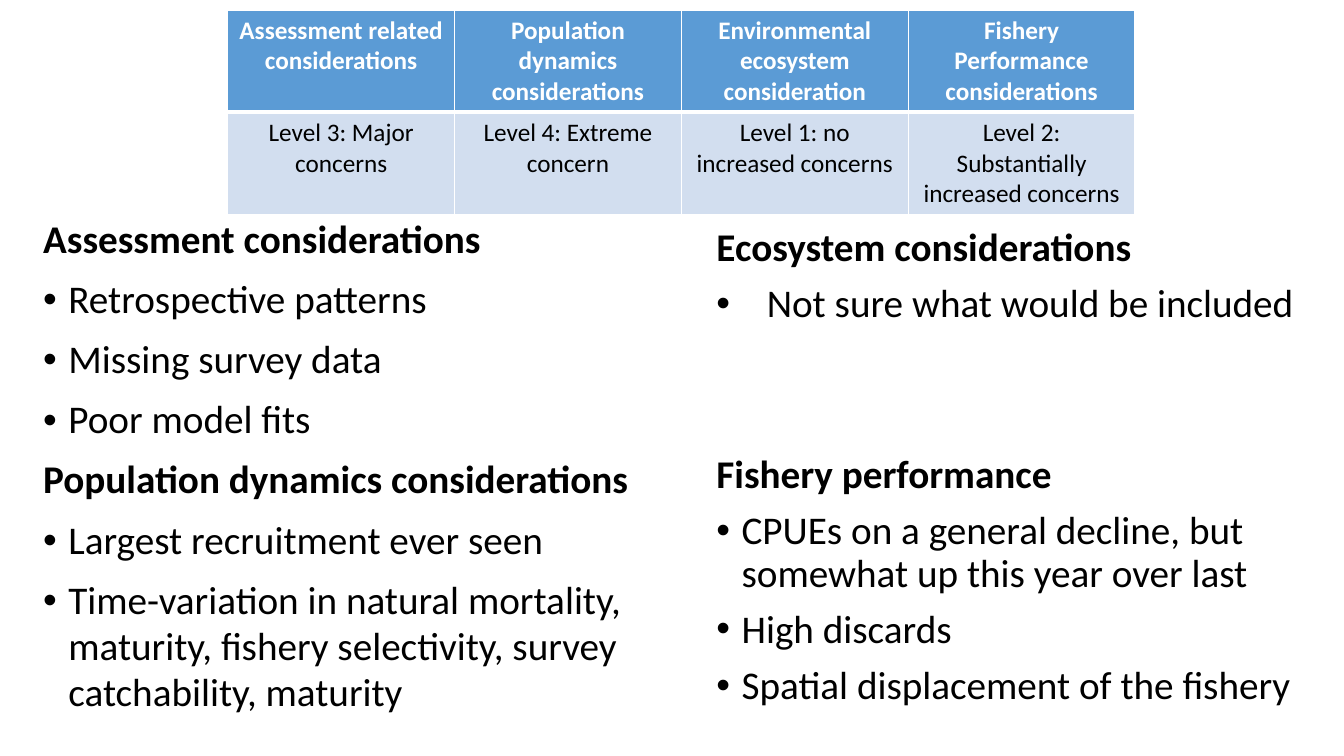
from dataclasses import dataclass

from lxml import etree
from pptx import Presentation
from pptx.dml.color import RGBColor as Color
from pptx.enum import text as t
from pptx.oxml import ns
from pptx.util import Pt


@dataclass(frozen=True)
class Theme:
    font: str = "Calibri"
    body: int = 28
    cell: int = 18
    black: str = "000000"
    white: str = "FFFFFF"
    head: str = "5B9BD5"
    band: str = "D2DEEF"


theme = Theme()


def style(par, size, color, bold):
    for run in par.runs:
        font = run.font
        font.name, font.size, font.bold = theme.font, Pt(size), bold
        font.color.rgb = Color.from_string(color)


def add(parent, tag, **attrs):
    """Append a DrawingML element with the given attributes."""
    return etree.SubElement(parent, ns.qn(tag), attrs)


deck = Presentation()
deck.slide_width, deck.slide_height = Pt(960), Pt(540)
slide = deck.slides.add_slide(deck.slide_layouts[6])

# Each line: text, indent (0 marks a heading), space before
left = [
    ("Assessment considerations", 0, 0),
    ("Retrospective patterns", 18, 10),
    ("Missing survey data", 18, 10),
    ("Poor model fits", 18, 10),
    ("Population dynamics considerations", 0, 10),
    ("Largest recruitment ever seen", 18, 10),
    ("Time-variation in natural mortality, maturity, fishery selectivity, "
     "survey catchability, maturity", 18, 10),
]
right = [
    ("Ecosystem considerations", 0, 0),
    ("Not sure what would be included", 36, 10),
    ("Fishery performance", 0, 91.5),
    ("CPUEs on a general decline, but somewhat up this year over last", 18, 10),
    ("High discards", 18, 10),
    ("Spatial displacement of the fishery", 18, 10),
]
columns = [
    (left, 23.8, 151.2, 441.4, 0.98),
    (right, 504.7, 159.1, 479.5, 0.9),
]
for lines, x, y, width, spacing in columns:
    box = slide.shapes.add_textbox(Pt(x), Pt(y), Pt(width), Pt(388.8))
    frame = box.text_frame
    frame.word_wrap = True
    frame.text = "\n".join(line[0] for line in lines)
    for par, (_, indent, gap) in zip(frame.paragraphs, lines):
        par.line_spacing = spacing
        par.space_before = Pt(gap)
        if indent:
            props = par._p.get_or_add_pPr()
            props.set("marL", str(Pt(indent)))
            props.set("indent", str(-Pt(indent)))
            add(props, "a:buFont", typeface="Arial")
            add(props, "a:buChar", char="•")
        style(par, theme.body, theme.black, not indent)

levels = [
    ("Assessment related considerations", "Population dynamics considerations",
     "Environmental ecosystem consideration", "Fishery Performance considerations"),
    ("Level 3: Major concerns", "Level 4: Extreme concern",
     "Level 1: no increased concerns", "Level 2: Substantially increased concerns"),
]
looks = [(theme.head, theme.white, True), (theme.band, theme.black, False)]
grid = slide.shapes.add_table(2, 4, Pt(162.7), Pt(7.2), Pt(648), Pt(146)).table
grid.first_row = grid.horz_banding = False
for r, (words, (fill, color, bold)) in enumerate(zip(levels, looks)):
    for c, word in enumerate(words):
        cell = grid.cell(r, c)
        props = cell._tc.get_or_add_tcPr()
        sides = {"L": 1, "R": 1, "T": 1 if r == 0 else 3, "B": 3 if r == 0 else 1}
        for side, width in sides.items():
            edge = add(props, f"a:ln{side}", w=str(Pt(width)))
            add(add(edge, "a:solidFill"), "a:srgbClr", val=theme.white)
        cell.fill.solid()
        cell.fill.fore_color.rgb = Color.from_string(fill)
        cell.text_frame.text = word
        par = cell.text_frame.paragraphs[0]
        par.alignment = t.PP_ALIGN.CENTER
        style(par, theme.cell, color, bold)

deck.save("out.pptx")
